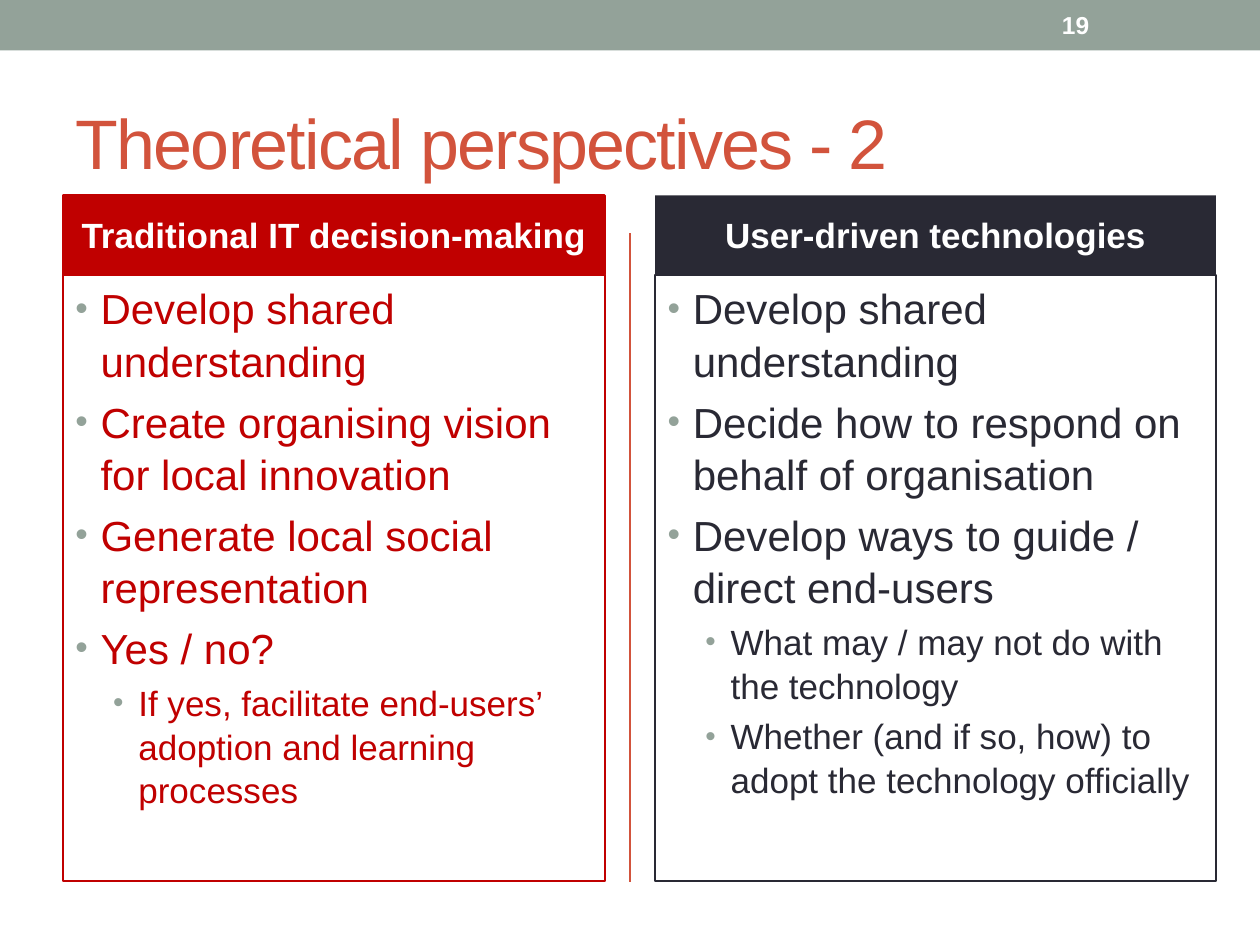
import pptx
import pptx.util
import pptx.dml.color
import pptx.enum.shapes
import pptx.enum.text
import pptx.oxml.ns
from lxml import etree

Inches = pptx.util.Inches
Pt = pptx.util.Pt
ALIGN = pptx.enum.text.PP_ALIGN
ANCHOR = pptx.enum.text.MSO_ANCHOR

COLORS = {
    "sage": "93A299",
    "rust": "D2533C",
    "red": "C00000",
    "ink": "292934",
    "white": "FFFFFF",
}
SIZES = (24, 20)  # text size by bullet level

LEFT = [
    (0, "Develop shared understanding"),
    (0, "Create organising vision for local innovation"),
    (0, "Generate local social representation"),
    (0, "Yes / no?"),
    (1, "If yes, facilitate end-users’ adoption and learning processes"),
]
RIGHT = [
    (0, "Develop shared understanding"),
    (0, "Decide how to respond on behalf of organisation"),
    (0, "Develop ways to guide / direct end-users"),
    (1, "What may / may not do with the technology"),
    (1, "Whether (and if so, how) to adopt the technology officially"),
]


def rgb(name):
    return pptx.dml.color.RGBColor.from_string(COLORS[name])


def style(para, size, color, bold=False, align=ALIGN.LEFT):
    para.alignment = align
    font = para.font
    font.name, font.size, font.bold = "Arial", Pt(size), bold
    font.color.rgb = rgb(color)


def add_box(slide, at, fill=None, line=None, width=1):
    kind = pptx.enum.shapes.MSO_SHAPE.RECTANGLE
    box = slide.shapes.add_shape(kind, *map(Inches, at))
    box.shadow.inherit = False
    if fill:
        box.fill.solid()
        box.fill.fore_color.rgb = rgb(fill)
    else:
        box.fill.background()
    if line:
        box.line.color.rgb = rgb(line)
        box.line.width = Pt(width)
    else:
        box.line.fill.background()
    return box


def add_rule(slide, x, top, end):
    kind = pptx.enum.shapes.MSO_CONNECTOR.STRAIGHT
    rule = slide.shapes.add_connector(kind, *map(Inches, (x, top, x, end)))
    rule.line.color.rgb = rgb("rust")
    rule.line.width = Pt(1.5)
    props = rule._element.spPr
    etree.SubElement(props, pptx.oxml.ns.qn("a:effectLst"))


def add_bullet(para, level):
    props = para._p.get_or_add_pPr()
    props.set("marL", str(Inches(0.2 + 0.3 * level)))
    props.set("indent", str(Inches(-0.2)))
    qn = pptx.oxml.ns.qn
    color = etree.SubElement(props, qn("a:buClr"))
    etree.SubElement(color, qn("a:srgbClr"), val=COLORS["sage"])
    etree.SubElement(props, qn("a:buSzPct"), val="85000")
    etree.SubElement(props, qn("a:buFont"), typeface="Arial")
    etree.SubElement(props, qn("a:buChar"), char="•")


def add_title(slide, text):
    title = slide.shapes.title
    title.left, title.top = Inches(0.5), Inches(0.58)
    title.width, title.height = Inches(9), Inches(1.08)
    frame = title.text_frame
    frame.text = text
    frame.vertical_anchor = ANCHOR.MIDDLE
    para = frame.paragraphs[0]
    style(para, 40, "rust")
    para.runs[0]._r.get_or_add_rPr().set("spc", "-100")


def add_column(slide, x, width, head, items, color, edge=None):
    # Heading band
    band = add_box(slide, (x, 1.55, width, 0.63), color, edge, 1.5)
    frame = band.text_frame
    frame.text = head
    frame.vertical_anchor = ANCHOR.MIDDLE
    style(frame.paragraphs[0], 20, "white", True, ALIGN.CENTER)

    # Bulleted panel
    panel = add_box(slide, (x, 2.18, width, 4.81), line=color)
    frame = panel.text_frame
    frame.vertical_anchor = ANCHOR.TOP
    for i, (level, text) in enumerate(items):
        para = frame.add_paragraph() if i else frame.paragraphs[0]
        para.text = text
        para.level = level
        add_bullet(para, level)
        size = SIZES[level]
        para.line_spacing = 1.04
        para.space_before = Pt(0.2 * size if i else 0)
        style(para, size, color)


def add_number(slide, text):
    at = map(Inches, (8.33, 0.02, 1.17, 0.36))
    frame = slide.shapes.add_textbox(*at).text_frame
    frame.word_wrap = True
    frame.vertical_anchor = ANCHOR.MIDDLE
    frame.text = text
    style(frame.paragraphs[0], 14, "white", True)


def main():
    deck = pptx.Presentation()
    deck.slide_width, deck.slide_height = Inches(10), Inches(7.5)
    slide = deck.slides.add_slide(deck.slide_layouts[5])

    # Top band and divider
    add_box(slide, (0, 0, 10, 0.4), "sage")
    add_rule(slide, 5, 1.85, 7)

    # Content
    add_title(slide, "Theoretical perspectives - 2")
    add_column(slide, 0.5, 4.3, "Traditional IT decision-making",
               LEFT, "red", "red")
    add_column(slide, 5.2, 4.45, "User-driven technologies", RIGHT, "ink")
    add_number(slide, "19")
    deck.save("out.pptx")


if __name__ == "__main__":
    main()
